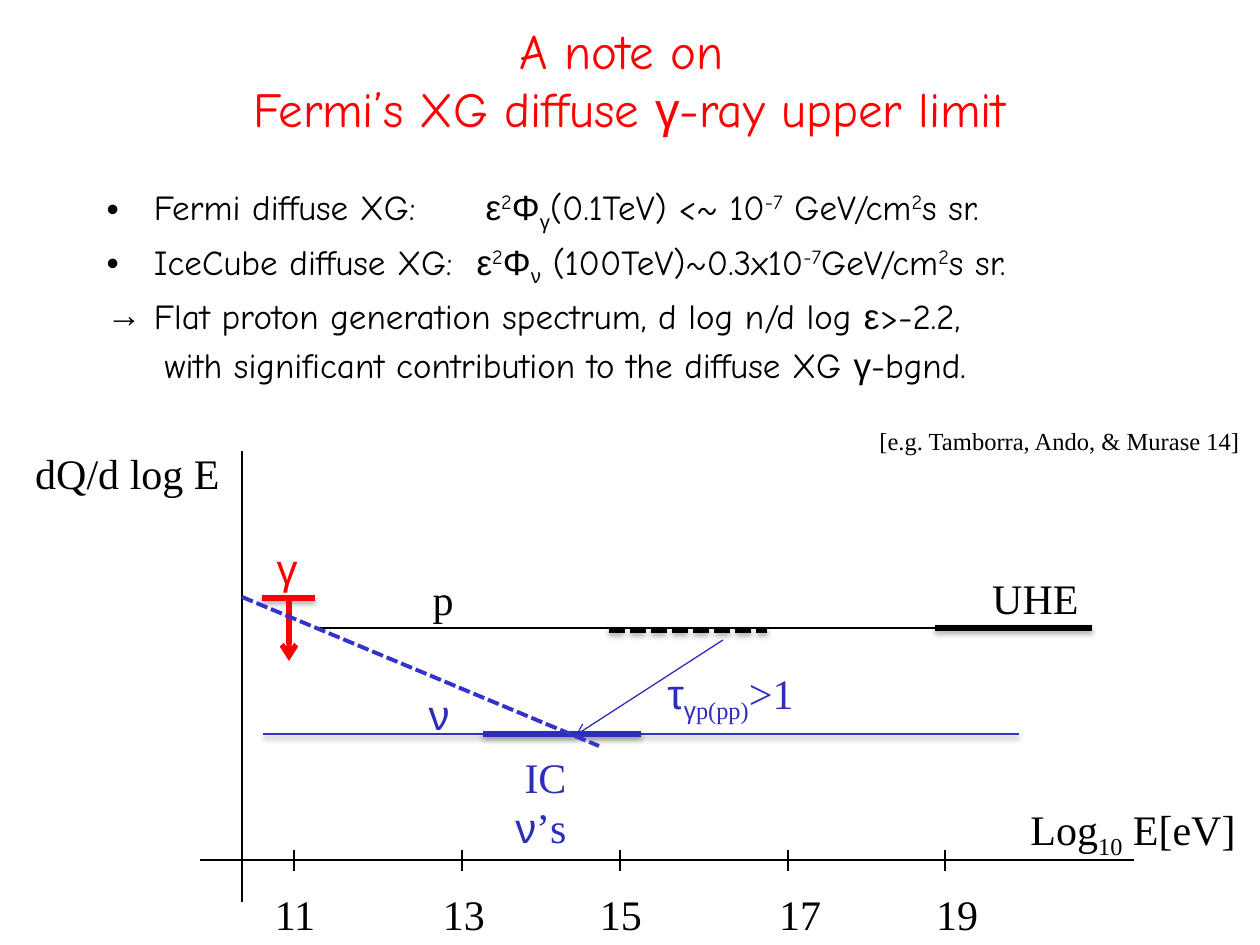
from itertools import groupby

from pptx import Presentation
from pptx.dml.color import RGBColor
from pptx.enum.dml import MSO_LINE
from pptx.enum.shapes import MSO_CONNECTOR
from pptx.enum.text import MSO_ANCHOR, MSO_AUTO_SIZE, PP_ALIGN
from pptx.oxml import parse_xml
from pptx.oxml.ns import nsdecls
from pptx.oxml.xmlchemy import OxmlElement
from pptx.util import Emu, Pt

BLACK = RGBColor(0x00, 0x00, 0x00)
RED = RGBColor(0xFF, 0x00, 0x00)
BLUE = RGBColor(0x33, 0x33, 0xCC)
DARK_BLUE = RGBColor(0x2D, 0x2D, 0xB9)
HAND = "Comic Neue"
SERIF = "Times New Roman"
GREEK = "Arial"
BASELINES = {"^": "30000", "_": "-25000"}


def px(n):
    """Turn pixels at 126 to the inch into EMU."""
    return Emu(round(n * 914400 / 126))


def is_greek(char):
    """Tell whether a character is a Greek letter."""
    return "Α" <= char <= "ω"


def add_runs(p, text, font, size, color):
    """Add text to a paragraph, with {^x} raised, {_x} lowered and Greek in its own font."""
    for part in text.replace("}", "{").split("{"):
        baseline = BASELINES.get(part[:1])
        for greek, chars in groupby(part[1:] if baseline else part, is_greek):
            r = p.add_run()
            r.text = "".join(chars)
            r.font.name = GREEK if greek else font
            r.font.size = Pt(size)
            r.font.color.rgb = color
            if baseline:
                r._r.get_or_add_rPr().set("baseline", baseline)


def place(s, left, top, width, height):
    """Position a shape and keep its text at the given size."""
    s.left, s.top, s.width, s.height = map(px, (left, top, width, height))
    s.text_frame.auto_size = MSO_AUTO_SIZE.NONE


def add_title(slide, lines):
    """Fill the title placeholder with centred lines."""
    s = slide.shapes.title
    place(s, 94, 0, 1071, 158)
    s.text_frame.vertical_anchor = MSO_ANCHOR.MIDDLE
    p = s.text_frame.paragraphs[0]
    p.alignment = PP_ALIGN.CENTER
    for i, line in enumerate(lines):
        if i:
            p.add_line_break()
        add_runs(p, line, HAND, 28, RED)


def set_bullet(p, char):
    """Give a paragraph its own bullet character."""
    bullet = OxmlElement("a:buChar")
    bullet.set("char", char)
    p._p.get_or_add_pPr().append(bullet)


def set_plain(p, indent):
    """Indent a paragraph and take its bullet away."""
    pPr = p._p.get_or_add_pPr()
    pPr.set("marL", str(px(indent)))
    pPr.set("indent", "0")
    pPr.append(OxmlElement("a:buNone"))


def set_tab(p, position):
    """Give a paragraph one left tab stop."""
    p._p.get_or_add_pPr().append(parse_xml(
        f'<a:tabLst {nsdecls("a")}><a:tab pos="{px(position)}" algn="l"/></a:tabLst>'))


def add_body(slide):
    """Fill the body placeholder with the measurements and the conclusion."""
    s = slide.placeholders[1]
    place(s, 94, 179, 1071, 231)
    tf = s.text_frame
    lines = [
        "Fermi diffuse XG:\tε{^2}Φ{_γ}(0.1TeV) <~ 10{^-7} GeV/cm{^2}s sr.",
        "IceCube diffuse XG:\tε{^2}Φ{_ν} (100TeV)~0.3x10{^-7}GeV/cm{^2}s sr.",
        "Flat proton generation spectrum, d log n/d log ε>-2.2,",
        "with significant contribution to the diffuse XG γ-bgnd.",
    ]
    for i, line in enumerate(lines):
        p = tf.add_paragraph() if i else tf.paragraphs[0]
        add_runs(p, line, HAND, 20, BLACK)
    fermi, icecube, result, detail = tf.paragraphs
    set_tab(fermi, 379)
    set_tab(icecube, 370)
    set_bullet(result, "→")
    set_plain(detail, 58)


def add_line(slide, x1, y1, x2, y2, color=BLACK, width=0.75, dash=None, shadow=False, arrow=False):
    """Draw a straight line, if asked with dashes, a soft shadow or an arrowhead."""
    s = slide.shapes.add_connector(MSO_CONNECTOR.STRAIGHT, *map(px, (x1, y1, x2, y2)))
    s.line.color.rgb = color
    s.line.width = Pt(width)
    if dash:
        s.line.dash_style = dash
    if arrow:
        tail = OxmlElement("a:tailEnd")
        tail.set("type", "arrow")
        s.line._get_or_add_ln().append(tail)
    effect = (
        '<a:outerShdw blurRad="40000" dist="23000" dir="5400000" rotWithShape="0">'
        '<a:srgbClr val="000000"><a:alpha val="35000"/></a:srgbClr></a:outerShdw>'
    ) if shadow else ""
    s._element.spPr.append(parse_xml(f'<a:effectLst {nsdecls("a")}>{effect}</a:effectLst>'))


def add_label(slide, left, top, width, text, color=BLACK, size=24, height=63, align=PP_ALIGN.RIGHT):
    """Add an unwrapped label, one line to each part of the text."""
    s = slide.shapes.add_textbox(0, 0, 0, 0)
    place(s, left, top, width, height)
    s.text_frame.word_wrap = False
    p = s.text_frame.paragraphs[0]
    p.alignment = align
    for i, line in enumerate(text.split("\n")):
        if i:
            p.add_line_break()
        add_runs(p, line, SERIF, size, color)


def add_axes(slide):
    """Draw both axes with their names, ticks and tick labels."""
    add_line(slide, 242, 451, 242, 902)
    add_line(slide, 200, 860, 1134, 860)
    add_label(slide, 20, 441, 212, "dQ/d log E")
    add_label(slide, 1013, 797, 235, "Log{_10} E[eV]")
    ticks = [(11, 294, 295), (13, 462, 464), (15, 620, 621), (17, 788, 800), (19, 945, 957)]
    for value, x, middle in ticks:
        add_line(slide, x, 850, x, 871)
        add_label(slide, middle - 34, 882, 68, str(value), align=PP_ALIGN.CENTER)


def add_spectra(slide):
    """Draw the proton, neutrino and gamma-ray spectra."""
    add_line(slide, 315, 628, 1092, 628)
    add_line(slide, 935, 628, 1092, 628, width=3, shadow=True)
    add_line(slide, 263, 734, 1019, 734, BLUE, 1.25, shadow=True)
    add_line(slide, 609, 630, 767, 630, width=3, dash=MSO_LINE.SQUARE_DOT, shadow=True)
    add_line(slide, 483, 734, 641, 734, DARK_BLUE, 3, shadow=True)
    add_line(slide, 723, 640, 576, 735, DARK_BLUE, arrow=True)
    add_line(slide, 262, 598, 315, 598, RED, 3, shadow=True)
    add_line(slide, 289, 598, 289, 661, RED, 3, arrow=True)
    add_line(slide, 242, 597, 599, 746, BLUE, 2.25, dash=MSO_LINE.SQUARE_DOT)


def add_spectrum_labels(slide):
    """Name the spectra and cite the reference."""
    add_label(slide, 420, 567, 46, "p")
    add_label(slide, 979, 566, 112, "UHE")
    add_label(slide, 414, 682, 48, "ν", DARK_BLUE)
    add_label(slide, 501, 745, 78, "IC\nν’s", DARK_BLUE, height=113)
    add_label(slide, 655, 661, 151, "τ{_γp(pp)}>1", DARK_BLUE)
    add_label(slide, 267, 536, 43, "γ", RED)
    add_label(slide, 867, 420, 385, "[e.g. Tamborra, Ando, & Murase 14]", size=14, height=43)


def main():
    """Build the slide and save it."""
    prs = Presentation()
    prs.slide_width, prs.slide_height = px(1260), px(945)
    slide = prs.slides.add_slide(prs.slide_layouts[1])
    add_title(slide, ["A note on ", "Fermi’s XG diffuse γ-ray upper limit"])
    add_body(slide)
    add_axes(slide)
    add_spectra(slide)
    add_spectrum_labels(slide)
    prs.save("out.pptx")


if __name__ == "__main__":
    main()
